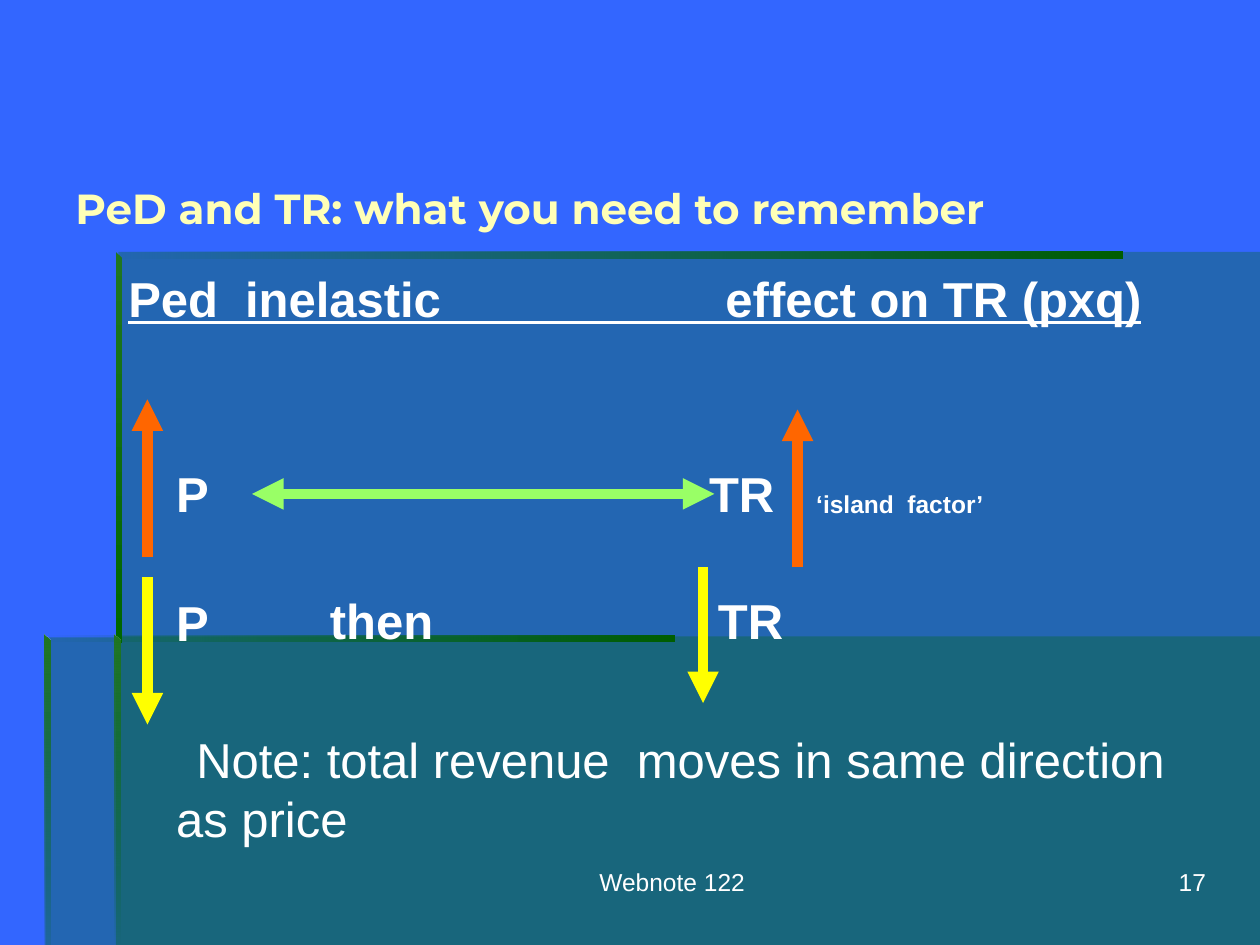
from lxml.etree import SubElement
from pptx import Presentation
from pptx.dml.color import RGBColor
from pptx.enum.shapes import MSO_CONNECTOR
from pptx.enum.text import MSO_ANCHOR, PP_ALIGN
from pptx.oxml.ns import qn
from pptx.util import Inches, Pt

WHITE, GREEN, EDGE, DARK = "FFFFFF", "006600", "207620", "005E00"
ORANGE, LIME, YELLOW = "FF6600", "99FF66", "FFFF00"


def color(hex_value):
    return RGBColor.from_string(hex_value)


class SlideBuilder:
    """Holds the text style and the current slide."""

    base = {"name": "Arial", "size": Pt(28), "bold": False, "underline": False}

    def __init__(self, presentation, background):
        self.slide = presentation.slides.add_slide(presentation.slide_layouts[6])
        self.slide.background.fill.solid()
        self.slide.background.fill.fore_color.rgb = color(background)

    def panel(self, points, stops, angle=None):
        """Polygon; stops are (colour, opacity %), one for a plain fill."""
        corners = [(Inches(x), Inches(y)) for x, y in points]
        builder = self.slide.shapes.build_freeform(*corners[0], scale=1.0)
        builder.add_line_segments(corners[1:], close=True)
        shape = builder.convert_to_shape()
        shape.shadow.inherit = False
        shape.line.fill.background()
        if angle is None:
            shape.fill.solid()
            shape.fill.fore_color.rgb = color(stops[0][0])
            nodes = list(shape._element.spPr.iter(qn("a:srgbClr")))
        else:
            shape.fill.gradient()
            gradient = shape._element.spPr.find(qn("a:gradFill"))
            for child in list(gradient):
                gradient.remove(child)
            stop_list = SubElement(gradient, qn("a:gsLst"))
            nodes = []
            for position, (hex_value, _) in zip((0, 100000), stops):
                stop = SubElement(stop_list, qn("a:gs"), pos=str(position))
                nodes.append(SubElement(stop, qn("a:srgbClr"), val=hex_value))
            SubElement(gradient, qn("a:lin"), ang=str(angle * 60000), scaled="0")
        for node, (_, opacity) in zip(nodes, stops):
            if opacity < 100:
                SubElement(node, qn("a:alpha"), val=str(opacity * 1000))

    def text_box(self, left, top, width, height, anchor=MSO_ANCHOR.TOP):
        box = self.slide.shapes.add_textbox(
            Inches(left), Inches(top), Inches(width), Inches(height))
        box.text_frame.word_wrap = True
        box.text_frame.vertical_anchor = anchor
        return box.text_frame

    def paragraph(self, frame, text, changes, first=False, before=0,
                  align=PP_ALIGN.LEFT, margin=0, indent=0):
        """One paragraph; changes override the base format values."""
        paragraph = frame.paragraphs[0] if first else frame.add_paragraph()
        paragraph.alignment = align
        paragraph.space_before = Pt(before)
        properties = paragraph._p.get_or_add_pPr()
        properties.set("marL", str(Inches(margin)))
        properties.set("indent", str(Inches(indent)))
        run = paragraph.add_run()
        run.text = text
        values = {**self.base, **changes}
        run.font.color.rgb = color(values.pop("color", WHITE))
        for name, value in values.items():
            setattr(run.font, name, value)

    def line(self, start, end, hex_value, width=6, ends=("a:tailEnd",)):
        connector = self.slide.shapes.add_connector(
            MSO_CONNECTOR.STRAIGHT, *map(Inches, start + end))
        connector.line.color.rgb = color(hex_value)
        connector.line.width = Pt(width)
        for tag in ends:
            SubElement(connector.line._get_or_add_ln(), qn(tag), type="triangle")
        SubElement(connector._element.spPr, qn("a:effectLst"))


def main():
    presentation = Presentation()
    presentation.slide_width, presentation.slide_height = Inches(10), Inches(7.5)
    builder = SlideBuilder(presentation, "3366FF")

    # Translucent panels
    veil = [(GREEN, 30)]
    builder.panel([(0.92, 5.05), (0.92, 7.5), (10, 7.5), (10, 5.05)], veil)
    builder.panel([(0.94, 5.06), (0.36, 5.06), (0.36, 7.5), (10, 7.5),
                   (10, 2), (0.94, 2)], veil)

    # Bevelled edges: horizontal bars, then vertical bars
    edge = 0.05
    for left, top, right in ((0.92, 2, 8.91), (0.35, 5.04, 5.35)):
        builder.panel([(left, top), (left, top + edge), (right, top + edge),
                       (right, top)], [(GREEN, 0), (DARK, 100)], 0)
    for left, top, bottom, opacity in ((0.92, 2, 5.1, 100), (0.91, 5.04, 7.5, 0),
                                       (0.35, 5.04, 7.5, 10)):
        builder.panel([(left, top), (left, bottom), (left + edge, bottom),
                       (left + edge, top + edge)],
                      [(EDGE, 100), (GREEN, opacity)], 90)

    # Title
    title = builder.text_box(0.5, 0.27, 9.17, 1.63, MSO_ANCHOR.BOTTOM)
    builder.paragraph(title, "PeD and TR: what you need to remember", {
        "name": "Montserrat", "size": Pt(24), "bold": True, "color": "FFFFB7"},
        first=True)

    # Body: left column and note
    bold = {"bold": True}
    heading = {"bold": True, "underline": True}
    heading_top, rise_top, fall_top = 2.08, 3.63, 4.64
    body = builder.text_box(0.92, heading_top, 8.76, 4.58)
    builder.paragraph(body, "Ped  inelastic", heading, first=True)
    builder.paragraph(body, "P", bold, before=78, margin=0.38)
    builder.paragraph(body, "P", bold, before=40, margin=0.38)
    builder.paragraph(body, "Note: total revenue  moves in same direction as price",
                      {}, before=44.5, margin=0.38, indent=0.16)

    # Body: entries to the right, on the same rows
    for text, left, top, width, changes in (
            ("effect on TR (pxq)", 5.66, heading_top, 4, heading),
            ("TR", 5.53, rise_top, 0.9, bold),
            ("‘island  factor’", 6.38, rise_top + 0.2, 2, {**bold, "size": Pt(14)}),
            ("then", 2.52, fall_top, 1.5, bold),
            ("TR", 5.6, fall_top, 0.9, bold)):
        frame = builder.text_box(left, top, width, 0.55)
        builder.paragraph(frame, text, changes, first=True)

    # Rule joining the two headings
    builder.line((3.49, 2.56), (5.77, 2.56), WHITE, width=1.5, ends=())

    # Price and revenue arrows
    builder.line((1.17, 4.42), (1.17, 3.17), ORANGE)
    builder.line((2, 3.92), (5.67, 3.92), LIME, ends=("a:headEnd", "a:tailEnd"))
    builder.line((6.33, 4.5), (6.33, 3.25), ORANGE)
    builder.line((1.17, 4.58), (1.17, 5.75), YELLOW)
    builder.line((5.58, 4.5), (5.58, 5.58), YELLOW)

    # Footer and slide number
    for text, left, width, align in (("Webnote 122", 3.75, 3.17, PP_ALIGN.CENTER),
                                     ("17", 7.59, 2.08, PP_ALIGN.RIGHT)):
        footer = builder.text_box(left, 6.83, width, 0.52)
        builder.paragraph(footer, text, {"size": Pt(14)}, first=True, align=align)

    presentation.save("out.pptx")


if __name__ == "__main__":
    main()
